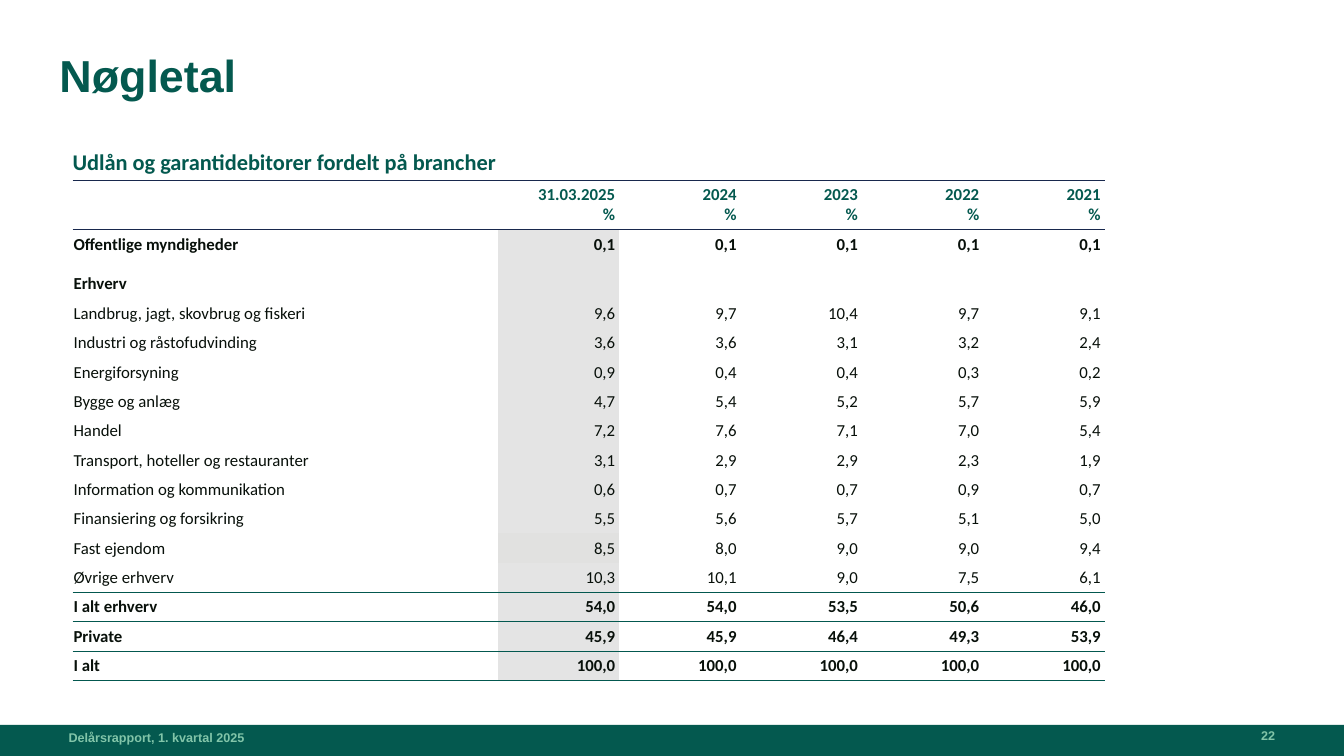
from dataclasses import dataclass
from typing import Any, Optional

from lxml import etree
from pptx import Presentation, util as u
from pptx.dml import color
from pptx.enum import shapes, text
from pptx.oxml import ns

COLS, ROWS = 160, 90
CELL = u.Inches(7.5) / ROWS
COLORS = {
    "green": "04594F",
    "mint": "82C5A9",
    "navy": "18284D",
    "rule": "03584F",
    "ink": "08100A",
    "grey": "E4E4E4",
    "warm grey": "E1E1E0",
}
PLAIN_STYLE = "{2D5ABB26-0587-4C30-8999-92F81FD0307C}"
LEFT, RIGHT = text.PP_ALIGN.LEFT, text.PP_ALIGN.RIGHT
TOP, BOTTOM = text.MSO_ANCHOR.TOP, text.MSO_ANCHOR.BOTTOM


@dataclass
class Area:
    left: float
    top: float
    width: float
    height: float

    def emu(self) -> list[int]:
        return [grid(n) for n in (self.left, self.top, self.width, self.height)]


@dataclass
class Rule:
    color: str
    points: float


@dataclass
class Row:
    label: str
    values: str = ""
    bold: bool = False
    height: Optional[float] = None
    shade: Optional[str] = "grey"
    rule: Optional[Rule] = None
    size: float = 12
    color: str = "ink"
    anchor: Any = BOTTOM
    indent: float = 0.12


@dataclass
class Label:
    area: Area
    text: str
    align: Any


TITLE = Area(7.08, 6.36, 143.64, 8.16)
BAND = Area(0, 86.28, COLS, 3.72)
TABLE = Area(8.64, 16.92, 122.88, 64.08)
YEAR_WIDTH = 14.45
YEARS = ["31.03.2025", "2024", "2023", "2022", "2021"]
THIN = Rule("rule", 0.25)
LABELS = [
    Label(Area(136.8, 85.08, 15, 3.36), "22", RIGHT),
    Label(Area(8.16, 85.32, 59.04, 3.36), "Delårsrapport, 1. kvartal 2025", LEFT),
]
TABLE_ROWS = [
    Row("Udlån og garantidebitorer fordelt på brancher", bold=True, height=4.56,
        shade=None, rule=Rule("navy", 1), size=16, color="green", indent=0),
    Row("", " ".join(f"{year}\n%" for year in YEARS).replace(" ", "|"), bold=True,
        height=5.88, shade=None, color="green", anchor=TOP, indent=0),
    Row("Offentlige myndigheder", "0,1|0,1|0,1|0,1|0,1", bold=True),
    Row("Erhverv", bold=True, height=4.68),
    Row("Landbrug, jagt, skovbrug og fiskeri", "9,6|9,7|10,4|9,7|9,1"),
    Row("Industri og råstofudvinding", "3,6|3,6|3,1|3,2|2,4"),
    Row("Energiforsyning", "0,9|0,4|0,4|0,3|0,2"),
    Row("Bygge og anlæg", "4,7|5,4|5,2|5,7|5,9"),
    Row("Handel", "7,2|7,6|7,1|7,0|5,4"),
    Row("Transport, hoteller og restauranter", "3,1|2,9|2,9|2,3|1,9"),
    Row("Information og kommunikation", "0,6|0,7|0,7|0,9|0,7"),
    Row("Finansiering og forsikring", "5,5|5,6|5,7|5,1|5,0"),
    Row("Fast ejendom", "8,5|8,0|9,0|9,0|9,4", shade="warm grey"),
    Row("Øvrige erhverv", "10,3|10,1|9,0|7,5|6,1", rule=THIN),
    Row("I alt erhverv", "54,0|54,0|53,5|50,6|46,0", bold=True, rule=THIN),
    Row("Private", "45,9|45,9|46,4|49,3|53,9", bold=True, rule=THIN),
    Row("I alt", "100,0|100,0|100,0|100,0|100,0", bold=True, rule=THIN),
]


def grid(cells: float) -> int:
    return round(cells * CELL)


def rgb(name: str) -> color.RGBColor:
    return color.RGBColor.from_string(COLORS[name])


def write(tf: Any, content: str, *, font: str, size: float, color: str,
          bold: bool = True, align: Any = LEFT, spacing: float = 1) -> None:
    for i, line in enumerate(content.split("\n")):
        p = tf.paragraphs[0] if i == 0 else tf.add_paragraph()
        p.alignment = align
        p.line_spacing = spacing
        if line:
            r = p.add_run()
            r.text = line
            r.font.name = font
            r.font.size = u.Pt(size)
            r.font.bold = bold
            r.font.color.rgb = rgb(color)


def frame(tf: Any, anchor: Any) -> None:
    tf.margin_left = tf.margin_top = tf.margin_right = tf.margin_bottom = 0
    tf.vertical_anchor = anchor
    tf.word_wrap = True
    tf.auto_size = text.MSO_AUTO_SIZE.NONE


def add_border(cell: Any, side: str, rule: Rule) -> None:
    tc_pr = cell._tc.get_or_add_tcPr()
    ln = etree.SubElement(tc_pr, ns.qn(f"a:ln{side}"), w=str(u.Pt(rule.points)))
    fill = etree.SubElement(ln, ns.qn("a:solidFill"))
    etree.SubElement(fill, ns.qn("a:srgbClr"), val=COLORS[rule.color])


def fill_cell(cell: Any, row: Row, column: int, above: Optional[Rule]) -> None:
    content = ([row.label] + (row.values.split("|") if row.values else [""] * len(YEARS)))[column]
    cell.margin_left = grid(row.indent)
    cell.margin_top = cell.margin_right = cell.margin_bottom = grid(0.48)
    cell.vertical_anchor = row.anchor
    for side, rule in (("T", above), ("B", row.rule)):
        if rule:
            add_border(cell, side, rule)
    if column == 1 and row.shade:
        cell.fill.solid()
        cell.fill.fore_color.rgb = rgb(row.shade)
    else:
        cell.fill.background()
    write(cell.text_frame, content, font="Calibri", size=row.size, color=row.color,
          bold=row.bold, align=RIGHT if column else LEFT)


def add_key_figures(s: Any) -> None:
    table = s.shapes.add_table(len(TABLE_ROWS), len(YEARS) + 1, *TABLE.emu()).table
    table.first_row = table.horz_banding = False
    table._tbl.tblPr.find(ns.qn("a:tableStyleId")).text = PLAIN_STYLE
    widths = [TABLE.width - len(YEARS) * YEAR_WIDTH] + [YEAR_WIDTH] * len(YEARS)
    for column, width in zip(table.columns, widths):
        column.width = grid(width)
    fixed = [row.height for row in TABLE_ROWS if row.height]
    body = (TABLE.height - sum(fixed)) / (len(TABLE_ROWS) - len(fixed))
    above = None
    for i, row in enumerate(TABLE_ROWS):
        table.rows[i].height = grid(row.height or body)
        for column in range(len(widths)):
            fill_cell(table.cell(i, column), row, column, above)
        above = row.rule
    table.cell(0, 0).merge(table.cell(0, len(YEARS)))


def add_band(s: Any) -> None:
    sp = s.shapes.add_shape(shapes.MSO_SHAPE.RECTANGLE, *BAND.emu())
    sp.shadow.inherit = False
    sp.fill.solid()
    sp.fill.fore_color.rgb = rgb("green")
    sp.line.fill.background()


def add_title(s: Any) -> None:
    sp = s.shapes.title
    sp.left, sp.top, sp.width, sp.height = TITLE.emu()
    frame(sp.text_frame, TOP)
    write(sp.text_frame, "Nøgletal", font="Arial", size=32, color="green", spacing=0.9)


def add_label(s: Any, label: Label) -> None:
    tf = s.shapes.add_textbox(*label.area.emu()).text_frame
    frame(tf, BOTTOM)
    write(tf, label.text, font="Arial", size=9, color="mint", align=label.align)


def main() -> None:
    prs = Presentation()
    prs.slide_width, prs.slide_height = grid(COLS), grid(ROWS)
    s = prs.slides.add_slide(prs.slide_layouts[5])
    add_band(s)
    add_title(s)
    add_key_figures(s)
    for label in LABELS:
        add_label(s, label)
    prs.save("out.pptx")


if __name__ == "__main__":
    main()
